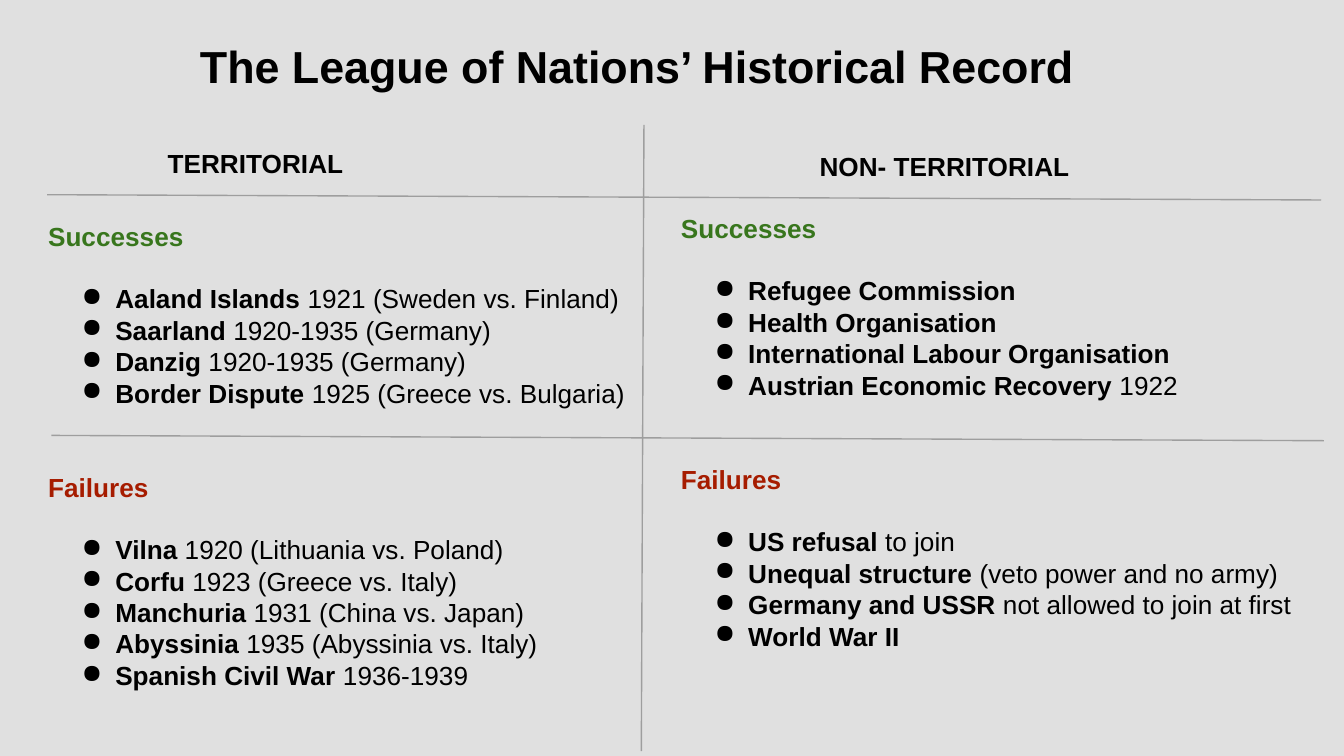
from typing import NamedTuple

import lxml.etree
import pptx
import pptx.dml.color
import pptx.oxml.ns
import pptx.util
from pptx.util import Cm

BLACK, GREEN, RED, GREY = "000000", "38761D", "A61C00", "9E9E9E"
LINE_PT = 16.8


class Item(NamedTuple):
    bold: str
    plain: str = ""


class Section(NamedTuple):
    title: str
    color: str
    items: list[Item]


class Box(NamedTuple):
    left: float
    top: float
    width: float
    height: float


class Column(NamedTuple):
    heading: str
    heading_box: Box
    body_box: Box
    sections: list[Section]


class Rule(NamedTuple):
    x1: float
    y1: float
    x2: float
    y2: float


COLUMNS = [
    Column("TERRITORIAL", Box(2.92, 2.54, 4.37, 1.6), Box(0.66, 3.91, 11.79, 9.42), [
        Section("Successes", GREEN, [
            Item("Aaland Islands", " 1921 (Sweden vs. Finland)"),
            Item("Saarland ", "1920-1935 (Germany)"),
            Item("Danzig", " 1920-1935 (Germany)"),
            Item("Border Dispute", " 1925 (Greece vs. Bulgaria)"),
        ]),
        Section("Failures", RED, [
            Item("Vilna", " 1920 (Lithuania vs. Poland)"),
            Item("Corfu", " 1923 (Greece vs. Italy)"),
            Item("Manchuria", " 1931 (China vs. Japan)"),
            Item("Abyssinia", " 1935 (Abyssinia vs. Italy)"),
            Item("Spanish Civil War", " 1936-1939"),
        ]),
    ]),
    Column("NON- TERRITORIAL", Box(15.24, 2.59, 5.54, 1.6), Box(12.62, 3.76, 12.34, 9.42), [
        Section("Successes", GREEN, [
            Item("Refugee Commission"),
            Item("Health Organisation"),
            Item("International Labour Organisation"),
            Item("Austrian Economic Recovery", " 1922"),
        ]),
        Section("Failures", RED, [
            Item("US refusal ", "to join"),
            Item("Unequal structure ", "(veto power and no army)"),
            Item("Germany and USSR", " not allowed to join at first"),
            Item("World War II"),
        ]),
    ]),
]
RULES = [
    Rule(12.17, 2.36, 12.12, 14.2),
    Rule(0.89, 3.68, 24.97, 3.78),
    Rule(0.97, 8.23, 25.02, 8.33),
]


def rgb(value: str) -> pptx.dml.color.RGBColor:
    return pptx.dml.color.RGBColor.from_string(value)


def add_box(s, box: Box):
    """Add an empty wrapping text box and return its text frame."""
    tf = s.shapes.add_textbox(*map(Cm, box)).text_frame
    frame_format = {"word_wrap": True} | {
        f"margin_{side}": Cm(0.25) for side in ("left", "top", "right", "bottom")}
    for name, value in frame_format.items():
        setattr(tf, name, value)
    return tf


def add_run(p, text: str, color: str = BLACK, bold: bool = True, size: float = 14) -> None:
    r = p.add_run()
    r.text = text
    font_format = {"name": "Arial", "size": pptx.util.Pt(size), "bold": bold}
    for name, value in font_format.items():
        setattr(r.font, name, value)
    r.font.color.rgb = rgb(color)


def add_bullet(p) -> None:
    pPr = p._p.get_or_add_pPr()
    pPr.set("marL", str(Cm(1.27)))
    pPr.set("indent", str(-Cm(0.635)))
    bullet = lxml.etree.SubElement(pPr, pptx.oxml.ns.qn("a:buChar"))
    bullet.set("char", "●")


def add_sections(s, box: Box, sections: list[Section]) -> None:
    tf = add_box(s, box)
    for i, section in enumerate(sections):
        p = tf.add_paragraph() if i else tf.paragraphs[0]
        if i:
            p.space_before = pptx.util.Pt(2 * LINE_PT)
        add_run(p, section.title, section.color)
        for j, item in enumerate(section.items):
            p = tf.add_paragraph()
            if j == 0:
                p.space_before = pptx.util.Pt(LINE_PT)
            add_bullet(p)
            add_run(p, item.bold)
            if item.plain:
                add_run(p, item.plain, bold=False)


def add_rule(s, rule: Rule) -> None:
    line = s.shapes.add_connector(
        pptx.enum.shapes.MSO_CONNECTOR.STRAIGHT, *map(Cm, rule))
    line.line.color.rgb = rgb(GREY)
    line.line.width = pptx.util.Pt(0.75)
    lxml.etree.SubElement(line._element.spPr, pptx.oxml.ns.qn("a:effectLst"))


def main() -> None:
    prs = pptx.Presentation()
    prs.slide_width, prs.slide_height = Cm(25.4), Cm(14.29)
    s = prs.slides.add_slide(prs.slide_layouts[6])
    s.background.fill.solid()
    s.background.fill.fore_color.rgb = rgb("E0E0E0")

    for column in COLUMNS:
        add_run(add_box(s, column.heading_box).paragraphs[0], column.heading)
        add_sections(s, column.body_box, column.sections)
    for rule in RULES:
        add_rule(s, rule)
    title = add_box(s, Box(3.53, 0.48, 17.68, 1.32))
    add_run(title.paragraphs[0], "The League of Nations’ Historical Record", size=24)
    prs.save("out.pptx")


if __name__ == "__main__":
    main()
